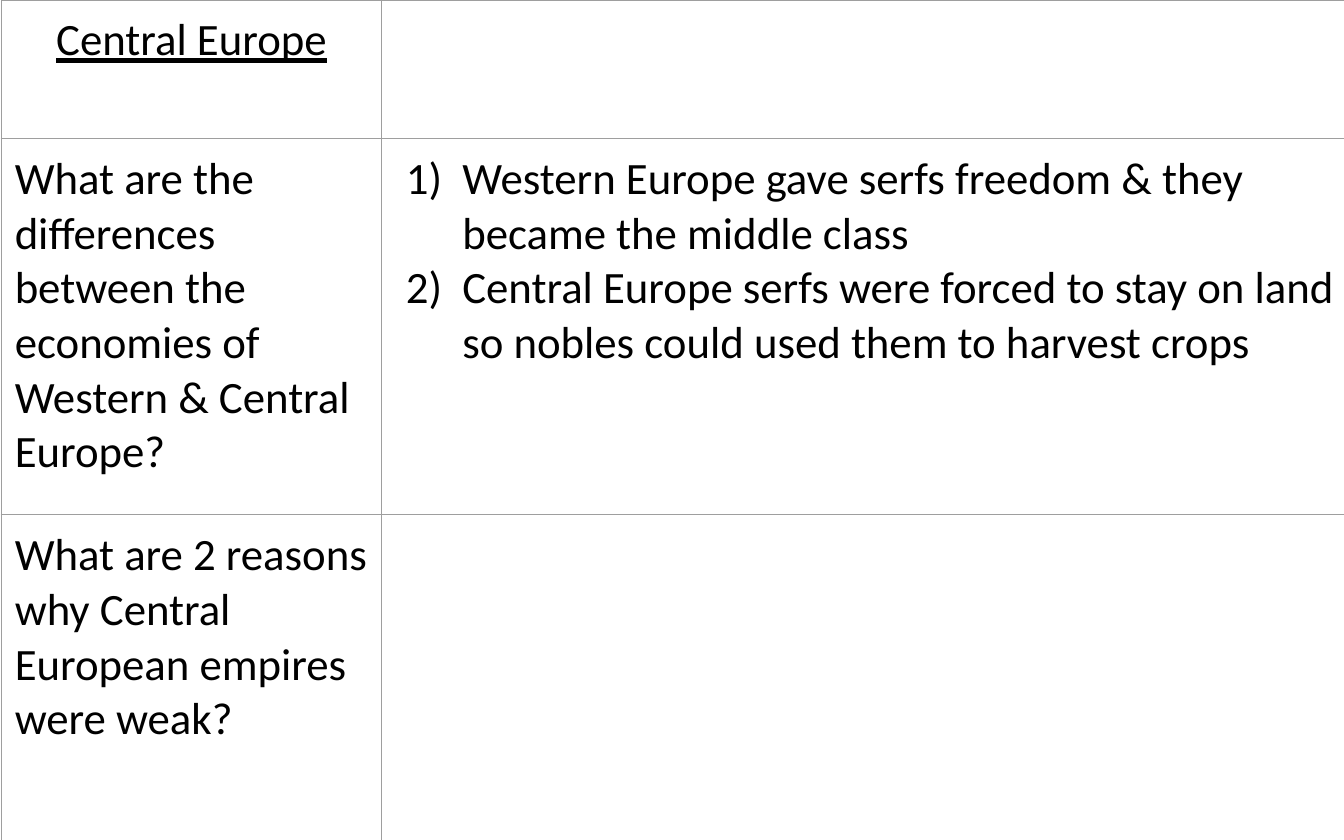
"""Build a study-notes slide comparing the economies of Western and Central Europe."""
from dataclasses import dataclass

from lxml import etree
from pptx import Presentation
from pptx import util as u
from pptx.dml.color import RGBColor
from pptx.enum import text
from pptx.oxml import ns

HUES = {"ink": "000000", "rule": "9E9E9E"}
FONT = "Calibri"
COLS = (2.83, 7.19)
ROWS = (1.03, 2.8, 2.45)


@dataclass
class Note:
    row: int
    col: int
    lines: tuple[str, ...]
    title: bool = False
    listed: bool = False


NOTES = (
    Note(0, 0, ("Central Europe",), title=True),
    Note(1, 0, ("What are the differences between the economies of Western & Central Europe?",)),
    Note(1, 1, (
        "Western Europe gave serfs freedom & they became the middle class",
        "Central Europe serfs were forced to stay on land so nobles could used them to harvest crops",
    ), listed=True),
    Note(2, 0, ("What are 2 reasons why Central European empires were weak?",)),
)


def add(node, tag: str, **attrs: str):
    return etree.SubElement(node, ns.qn(tag), attrs)


def frame(cell) -> None:
    cell.margin_left = cell.margin_right = u.Inches(0.1)
    cell.margin_top = cell.margin_bottom = u.Inches(0.1)
    props = cell._tc.get_or_add_tcPr()
    for side in "LRTB":
        line = add(props, f"a:ln{side}", w=str(u.Pt(0.75)))
        add(add(line, "a:solidFill"), "a:srgbClr", val=HUES["rule"])
    cell.fill.background()


def number(para) -> None:
    props = para._p.get_or_add_pPr()
    props.set("marL", str(u.Inches(0.5)))
    props.set("indent", str(u.Inches(-0.42)))
    add(props, "a:buFont", typeface=FONT)
    add(props, "a:buAutoNum", type="arabicParenR")


def write(cell, note: Note) -> None:
    body = cell.text_frame
    for i, line in enumerate(note.lines):
        para = body.add_paragraph() if i else body.paragraphs[0]
        para.alignment = text.PP_ALIGN.CENTER if note.title else text.PP_ALIGN.LEFT
        if note.listed:
            number(para)
        run = para.add_run()
        run.text = line
        run.font.name = FONT
        run.font.size = u.Pt(24)
        run.font.underline = note.title
        run.font.color.rgb = RGBColor.from_string(HUES["ink"])


def main() -> None:
    deck = Presentation()
    deck.slide_width, deck.slide_height = u.Inches(10), u.Inches(6.25)
    slide = deck.slides.add_slide(deck.slide_layouts[6])
    grid = slide.shapes.add_table(
        len(ROWS), len(COLS), u.Inches(0.01), u.Inches(0),
        u.Inches(sum(COLS)), u.Inches(sum(ROWS))).table
    grid.first_row = grid.horz_banding = False
    for col, width in zip(grid.columns, COLS):
        col.width = u.Inches(width)
    for row, height in zip(grid.rows, ROWS):
        row.height = u.Inches(height)
    for cell in grid.iter_cells():
        frame(cell)
    for note in NOTES:
        write(grid.cell(note.row, note.col), note)
    deck.save("out.pptx")


if __name__ == "__main__":
    main()
